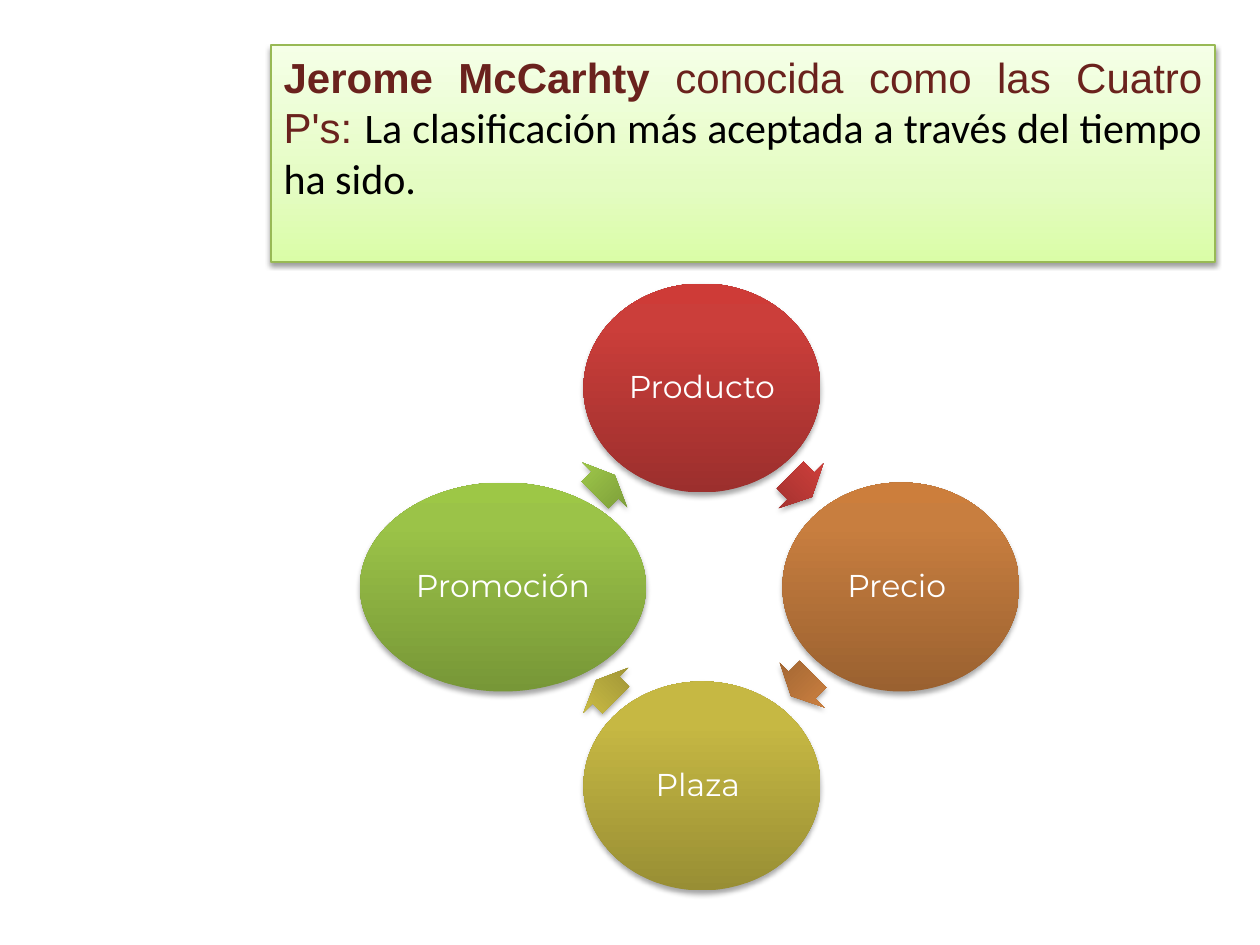
from pptx import Presentation
from pptx.dml.color import RGBColor
from pptx.enum.shapes import MSO_SHAPE
from pptx.enum.text import MSO_ANCHOR, MSO_AUTO_SIZE, PP_ALIGN
from pptx.oxml import parse_xml
from pptx.oxml.ns import nsdecls, qn
from pptx.util import Pt

OVAL, ARROW = MSO_SHAPE.OVAL, MSO_SHAPE.RIGHT_ARROW
TOP, MIDDLE = MSO_ANCHOR.TOP, MSO_ANCHOR.MIDDLE
FIXED = MSO_AUTO_SIZE.NONE
CENTER, JUSTIFY = PP_ALIGN.CENTER, PP_ALIGN.JUSTIFY

SCALE = 914400 / 126
WHITE = RGBColor(0xFF, 0xFF, 0xFF)
BLACK = RGBColor(0, 0, 0)
WINE = RGBColor(0x6A, 0x22, 0x1D)
OLIVE = RGBColor(0x98, 0xB9, 0x55)
REDS = [RGBColor(0x9C, 0x2F, 0x2D), RGBColor(0xCB, 0x3E, 0x3A), RGBColor(0xCE, 0x3B, 0x37)]
RUSTS = [RGBColor(0x9A, 0x61, 0x30), RGBColor(0xC8, 0x7E, 0x3F), RGBColor(0xCC, 0x7E, 0x3C)]
GOLDS = [RGBColor(0x98, 0x8E, 0x34), RGBColor(0xC6, 0xB8, 0x43), RGBColor(0xC9, 0xBB, 0x41)]
GREENS = [RGBColor(0x77, 0x97, 0x37), RGBColor(0x9B, 0xC3, 0x48), RGBColor(0x9D, 0xC7, 0x46)]
LIMES = [RGBColor(0xDA, 0xFD, 0xA7), RGBColor(0xE4, 0xFC, 0xC2), RGBColor(0xF5, 0xFF, 0xE7)]

HUB = (702, 587)
STEP = 199
HIGH = 209
CYCLE = [
    ("Producto", REDS, (0, -1), 237, (801, 486, 31)),
    ("Precio ", RUSTS, (1, 0), 237, (802, 685, 31)),
    ("Plaza ", GOLDS, (0, 1), 237, (606, 690, 28)),
    ("Promoción", GREENS, (-1, 0), 286, (605, 485, 28)),
]
INTRO = [
    ("Jerome McCarhty ", {"name": "Arial", "bold": True}, WINE),
    ("conocida como las Cuatro P's: ", {"name": "Arial", "bold": False}, WINE),
    ("La clasificación más aceptada a través del tiempo ha sido. ",
     {"name": "Calibri", "bold": False}, BLACK),
]


def px(num):
    """Turn pixels into EMU."""
    return round(num * SCALE)


def put(item, values):
    """Set each attribute named in values."""
    for name, value in values.items():
        setattr(item, name, value)


def shade(shape, tones, mid):
    """Fill a shape upward with three tones."""
    shape.fill.gradient()
    shape.fill.gradient_angle = 90
    stops = "".join(
        f'<a:gs pos="{pos * 1000}"><a:srgbClr val="{tone}"/></a:gs>'
        for pos, tone in zip((0, mid, 100), tones))
    old = shape.fill._xPr.find(".//" + qn("a:gsLst"))
    old.getparent().replace(old, parse_xml(f'<a:gsLst {nsdecls("a")}>{stops}</a:gsLst>'))


def cast(shape, far, alpha):
    """Give a shape a soft shadow below it."""
    shape.shadow.inherit = False
    shape._element.spPr.find(qn("a:effectLst")).append(parse_xml(
        f'<a:outerShdw {nsdecls("a")} blurRad="{Pt(3.1)}" dist="{Pt(far)}" '
        f'dir="5400000" rotWithShape="0"><a:srgbClr val="000000">'
        f'<a:alpha val="{alpha * 1000}"/></a:srgbClr></a:outerShdw>'))


def add_run(para, text, font, color):
    """Add one formatted run."""
    run = para.add_run()
    run.text = text
    put(run.font, font)
    run.font.color.rgb = color


def add_form(slide, kind, mid, size, tones):
    """Add a shaded shape around its middle."""
    (x, y), (wide, high) = mid, size
    shape = slide.shapes.add_shape(
        kind, px(x - wide / 2), px(y - high / 2), px(wide), px(high))
    shade(shape, tones, 80)
    shape.line.fill.background()
    cast(shape, 1.8, 35)
    return shape


def add_node(slide, text, tones, mid, wide):
    """Add a labelled ellipse."""
    frame = add_form(slide, OVAL, mid, (wide, HIGH), tones).text_frame
    inset = px(4)
    put(frame, {"margin_left": inset, "margin_right": inset, "margin_top": inset,
                "margin_bottom": inset, "word_wrap": True, "vertical_anchor": MIDDLE})
    para = frame.paragraphs[0]
    put(para, {"alignment": CENTER, "line_spacing": 0.9})
    add_run(para, text, {"name": "Montserrat", "size": Pt(18)}, WHITE)


def add_arrow(slide, tones, mid, wide, turn):
    """Add a turned block arrow."""
    arrow = add_form(slide, ARROW, mid, (wide, 63), tones)
    arrow.rotation = turn
    arrow.adjustments[0] = 0.6
    arrow.adjustments[1] = 0.5


def fill_title(title):
    """Format the title as the intro box."""
    put(title, {"left": px(271), "top": px(45), "width": px(944), "height": px(217)})
    shade(title, LIMES, 35)
    title.line.color.rgb = OLIVE
    title.line.width = Pt(0.75)
    cast(title, 1.6, 38)
    frame = title.text_frame
    put(frame, {"word_wrap": True, "auto_size": FIXED, "vertical_anchor": TOP})
    para = frame.paragraphs[0]
    para.alignment = JUSTIFY
    for text, font, color in INTRO:
        add_run(para, text, {"size": Pt(24), **font}, color)


def main():
    """Build and save the slide."""
    deck = Presentation()
    put(deck, {"slide_width": px(1260), "slide_height": px(945)})
    slide = deck.slides.add_slide(deck.slide_layouts[5])
    fill_title(slide.shapes.title)
    for num, (text, tones, (dx, dy), wide, (x, y, span)) in enumerate(CYCLE):
        add_node(slide, text, tones, (HUB[0] + dx * STEP, HUB[1] + dy * STEP), wide)
        add_arrow(slide, tones, (x, y), span, 45 + 90 * num)
    deck.save("out.pptx")


if __name__ == "__main__":
    main()
